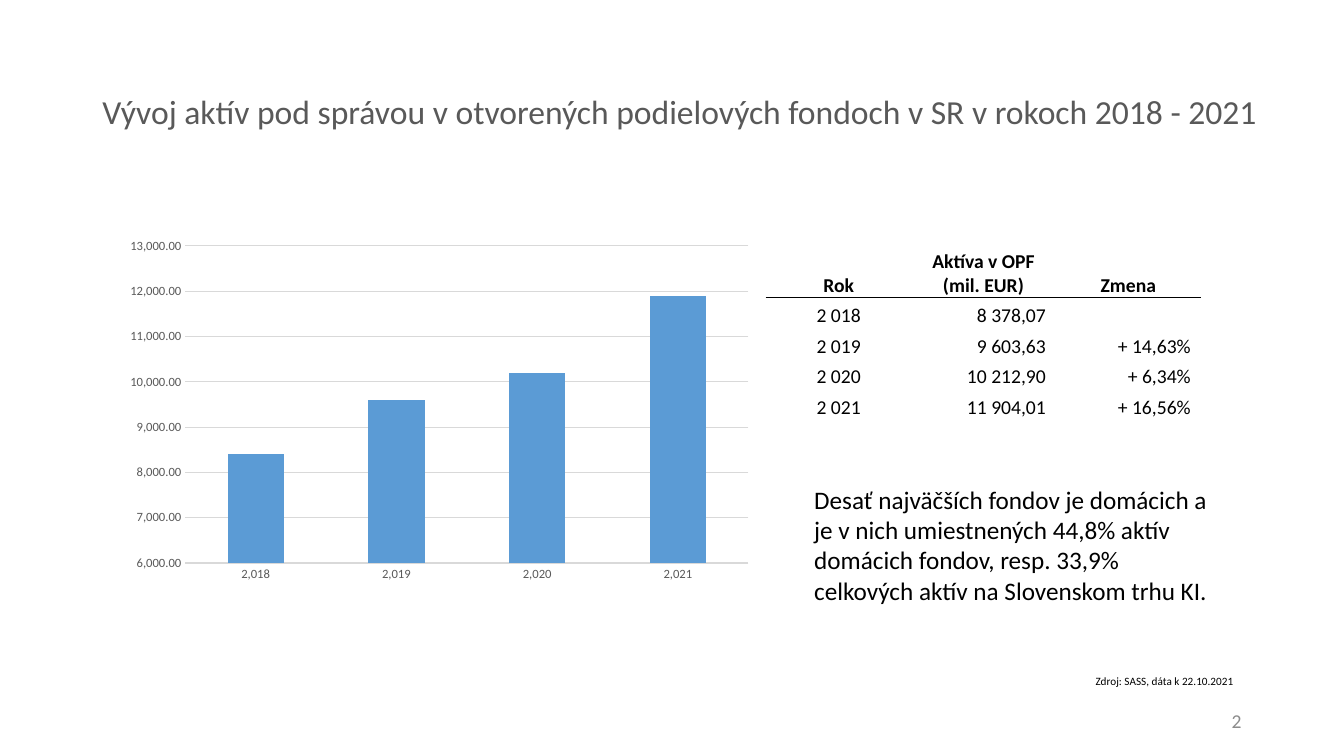
from lxml.etree import SubElement
from pptx import Presentation
from pptx.chart.data import CategoryChartData
from pptx.dml.color import RGBColor
from pptx.enum.chart import XL_CHART_TYPE as Kind, XL_TICK_MARK as Tick
from pptx.enum.text import MSO_ANCHOR as Anchor, PP_ALIGN as Align
from pptx.oxml import parse_xml
from pptx.oxml.ns import nsdecls, qn
from pptx.util import Cm, Pt

FONT = "Calibri"
BLACK, GREY, PALE, BLUE, GRID = "000000", "595959", "8C8C8C", "5B9BD5", "D9D9D9"
TEXTS = [
    ("Vývoj aktív pod správou v otvorených podielových fondoch v SR v rokoch 2018 - 2021",
     (2.33, 1.02, 30.33, 3.68), 24, GREY, Align.LEFT, Anchor.MIDDLE, 0.9),
    ("2", (23.92, 17.65, 7.62, 1.02), 14, PALE, Align.RIGHT, Anchor.MIDDLE, 1),
    ("Zdroj: SASS, dáta k 22.10.2021",
     (27.36, 16.87, 4.19, 0.61), 8, BLACK, Align.LEFT, Anchor.TOP, 1),
    ("Desať najväčších fondov je domácich a je v nich umiestnených 44,8% aktív "
     "domácich fondov, resp. 33,9% celkových aktív na Slovenskom trhu KI.",
     (20.27, 12.08, 10.64, 3.33), 18, BLACK, Align.LEFT, Anchor.TOP, 1),
]
ASSETS = {2018: 8400, 2019: 9600, 2020: 10200, 2021: 11900}
ROWS = [
    ("Rok", "Aktíva v OPF\v(mil. EUR)", "Zmena"),
    ("2 018", "8 378,07", ""),
    ("2 019", "9 603,63", "+ 14,63%"),
    ("2 020", "10 212,90", "+ 6,34%"),
    ("2 021", "11 904,01", "+ 16,56%"),
]
CHART = (2.95, 5.84, 16.23, 9.02)
PLOT = (1.72, 0.36, 14.19, 7.99)
TABLE = (19.31, 4.9)
COL, HEAD, ROW = 3.65, 2.59, 0.77


def paint(hue):
    return RGBColor.from_string(hue)


def style(font, size, hue, bold=False):
    font.name, font.size, font.bold = FONT, Pt(size), bold
    font.color.rgb = paint(hue)


def add_text(slide, text, box, size, hue, align, anchor, gap):
    frame = slide.shapes.add_textbox(*map(Cm, box)).text_frame
    frame.word_wrap = True
    frame.vertical_anchor = anchor
    para = frame.paragraphs[0]
    para.text, para.alignment, para.line_spacing = text, align, gap
    style(para.font, size, hue)


def add_bars(slide):
    data = CategoryChartData(number_format="#,##0.00")
    data.categories = list(ASSETS)
    data.categories.number_format = "#,##0"
    data.add_series("Aktíva v OPF", list(ASSETS.values()))
    chart = slide.shapes.add_chart(
        Kind.COLUMN_CLUSTERED, *map(Cm, CHART), data).chart
    chart.has_legend = chart.has_title = False
    style(chart.font, 10, BLACK)
    years, scale = chart.category_axis, chart.value_axis
    for axis, form in ((years, "#,##0"), (scale, "#,##0.00")):
        axis.major_tick_mark = axis.minor_tick_mark = Tick.NONE
        axis.format.line.fill.background()
        style(axis.tick_labels.font, 9, GREY)
        axis.tick_labels.number_format = form
        axis.tick_labels.number_format_is_linked = False
    years.has_major_gridlines = False
    scale.minimum_scale, scale.maximum_scale, scale.major_unit = 6000, 13000, 1000
    line = scale.major_gridlines.format.line
    line.color.rgb, line.width = paint(GRID), Pt(0.75)
    plot = chart.plots[0]
    plot.gap_width, plot.vary_by_categories = 150, False
    fill = plot.series[0].format.fill
    fill.solid()
    fill.fore_color.rgb = paint(BLUE)
    area = chart.element.find(".//" + qn("c:plotArea"))
    old = area.find(qn("c:layout"))
    if old is not None:
        area.remove(old)
    layout = parse_xml(f"<c:layout {nsdecls('c')}/>")
    area.insert(0, layout)
    manual = SubElement(layout, qn("c:manualLayout"))
    parts = {"layoutTarget": "inner", "xMode": "edge", "yMode": "edge"}
    for tag, part, full in zip("xywh", PLOT, CHART[2:] * 2):
        parts[tag] = part / full
    for tag, val in parts.items():
        SubElement(manual, qn("c:" + tag), val=str(val))


def add_rule(cell, side):
    edge = parse_xml(
        f'<a:{side} {nsdecls("a")} w="6350"><a:solidFill>'
        f'<a:srgbClr val="{BLACK}"/></a:solidFill></a:{side}>')
    cell._tc.get_or_add_tcPr().insert(0, edge)


def add_grid(slide):
    rows, cols = len(ROWS), len(ROWS[0])
    size = (COL * cols, HEAD + ROW * (rows - 1))
    grid = slide.shapes.add_table(rows, cols, *map(Cm, TABLE + size)).table
    grid.first_row = grid.horz_banding = False
    for col in grid.columns:
        col.width = Cm(COL)
    for r, row in enumerate(ROWS):
        grid.rows[r].height = Cm(ROW if r else HEAD)
        for c, text in enumerate(row):
            cell = grid.cell(r, c)
            right = r > 0 and c > 0
            cell.fill.background()
            cell.vertical_anchor = Anchor.BOTTOM
            cell.margin_left = cell.margin_top = cell.margin_bottom = 0
            cell.margin_right = Cm(0.25 if right else 0)
            para = cell.text_frame.paragraphs[0]
            para.text = text
            para.alignment = Align.RIGHT if right else Align.CENTER
            style(para.font, 14, BLACK, r == 0)
            if r < 2:
                add_rule(cell, "lnT" if r else "lnB")


def main():
    deck = Presentation()
    deck.slide_width, deck.slide_height = Cm(33.87), Cm(19.05)
    slide = deck.slides.add_slide(deck.slide_layouts[6])
    for item in TEXTS:
        add_text(slide, *item)
    add_bars(slide)
    add_grid(slide)
    deck.save("out.pptx")


if __name__ == "__main__":
    main()
